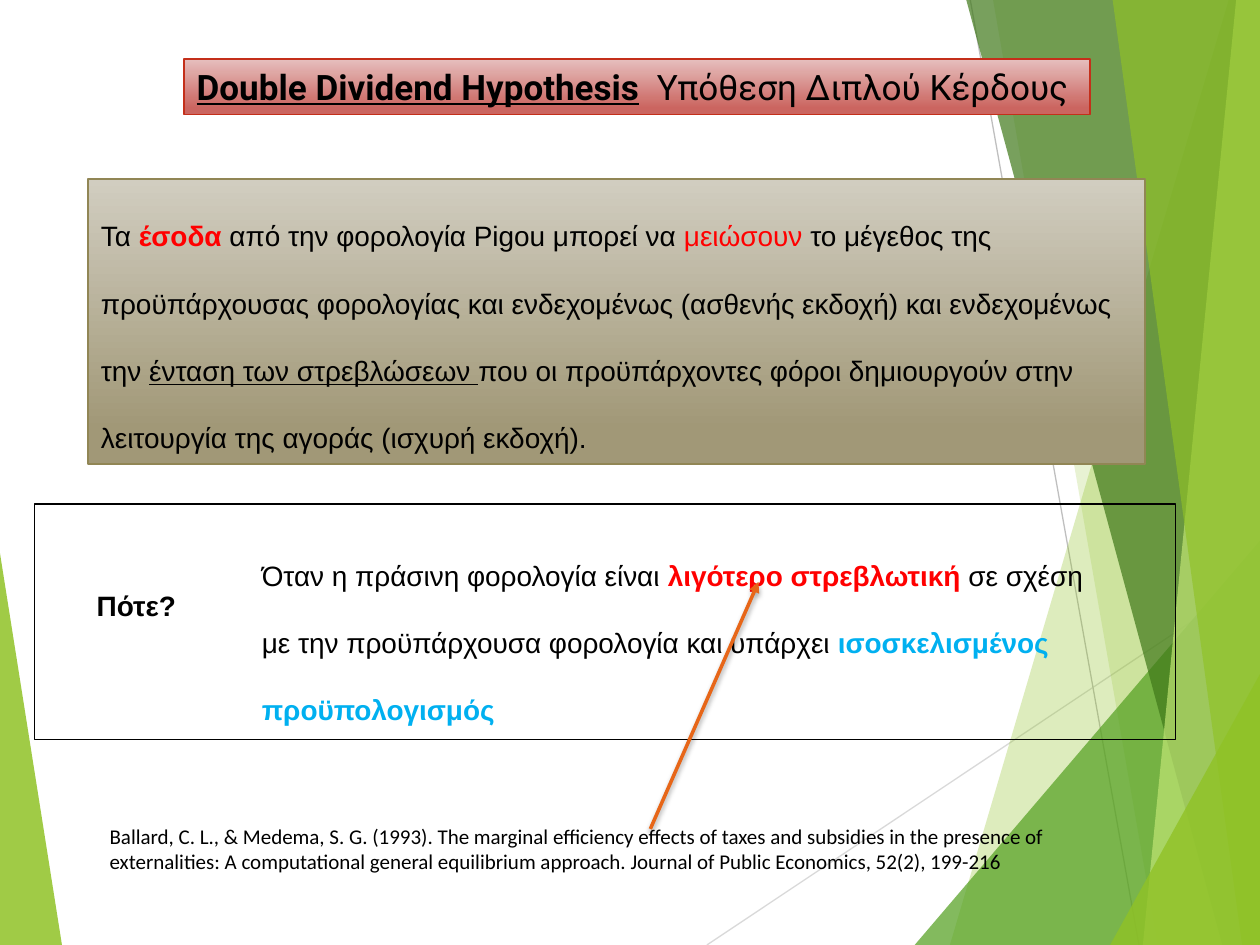
from dataclasses import dataclass

from lxml import etree
from pptx import Presentation
from pptx.dml.color import RGBColor
from pptx.enum.shapes import MSO_CONNECTOR, MSO_SHAPE
from pptx.enum.text import MSO_ANCHOR, MSO_AUTO_SIZE, PP_ALIGN
from pptx.oxml.ns import qn
from pptx.util import Cm, Pt

WIDTH, HEIGHT = 25.4, 19.05


@dataclass(frozen=True)
class Theme:
    ink: str = "000000"
    alert: str = "FF0000"
    budget: str = "00B0F0"
    arrow: str = "E76618"
    lime: str = "90C226"
    green: str = "54A021"
    forest: str = "3F7819"
    pale: str = "C0E474"
    light_ray: str = "D9D9D9"
    dark_ray: str = "BFBFBF"
    title_fill: tuple = ("E6BFBE", "CB6560")
    title_edge: str = "C42F1A"
    body_fill: tuple = ("D1CDC0", "A19877")
    body_edge: str = "918655"
    title_font: tuple = ("Roboto", 20)
    body_font: tuple = ("Arial", 16)
    citation_font: tuple = ("Calibri", 12)


def rgb(code):
    return RGBColor.from_string(code)


class SlideBuilder:
    def __init__(self, slide, theme):
        self.slide = slide
        self.theme = theme

    def panel(self, start, end, side, color, opacity):
        """Fill the area between a slanted edge and one side of the slide."""
        corners = [end, (side, HEIGHT), (side, start[1])]
        outline = self.slide.shapes.build_freeform(Cm(start[0]), Cm(start[1]))
        outline.add_line_segments([(Cm(x), Cm(y)) for x, y in corners])
        facet = outline.convert_to_shape()
        facet.shadow.inherit = False
        facet.line.fill.background()
        facet.fill.solid()
        facet.fill.fore_color.rgb = rgb(color)
        tint = facet._element.spPr.find(".//" + qn("a:srgbClr"))
        etree.SubElement(tint, qn("a:alpha"), val=str(opacity * 1000))

    def line(self, start, end, color, weight, arrow=False):
        stroke = self.slide.shapes.add_connector(
            MSO_CONNECTOR.STRAIGHT, *(Cm(v) for v in (*start, *end)))
        stroke.line.color.rgb = rgb(color)
        stroke.line.width = Pt(weight)
        properties = stroke._element.spPr
        effects = etree.SubElement(properties, qn("a:effectLst"))
        if arrow:
            etree.SubElement(properties.find(qn("a:ln")), qn("a:tailEnd"), type="triangle")
            shadow = etree.SubElement(effects, qn("a:outerShdw"), blurRad=str(Pt(3)),
                                      dist=str(Pt(2)), dir="5400000", rotWithShape="0")
            shade = etree.SubElement(shadow, qn("a:srgbClr"), val=self.theme.ink)
            etree.SubElement(shade, qn("a:alpha"), val="35000")

    def placeholder(self, holder, box, paragraphs, font, fill, edge, spacing=1.0):
        """Move a placeholder above the backdrop and give it a gradient panel."""
        self.slide.shapes._spTree.append(holder._element)
        holder.left, holder.top, holder.width, holder.height = (Cm(v) for v in box)
        holder.fill.gradient()
        holder.fill.gradient_angle = 270
        for stop, color, position in zip(holder.fill.gradient_stops, fill, (0, 0.88)):
            stop.color.rgb = rgb(color)
            stop.position = position
        holder.line.color.rgb = rgb(edge)
        holder.line.width = Pt(1)
        self.fill_text(holder.text_frame, paragraphs, font, spacing)
        for paragraph in holder.text_frame.paragraphs:
            properties = paragraph._p.get_or_add_pPr()
            properties.set("marL", "0")
            properties.set("indent", "0")
            bullet_off = etree.Element(qn("a:buNone"))
            properties.find(qn("a:defRPr")).addprevious(bullet_off)

    def text(self, box, paragraphs, font, spacing=1.0, bold=False, wrap=True):
        frame = self.slide.shapes.add_textbox(*(Cm(v) for v in box)).text_frame
        self.fill_text(frame, paragraphs, font, spacing, bold, wrap)

    def frame(self, box, color, weight):
        border = self.slide.shapes.add_shape(MSO_SHAPE.RECTANGLE, *(Cm(v) for v in box))
        border.shadow.inherit = False
        border.fill.background()
        border.line.color.rgb = rgb(color)
        border.line.width = Pt(weight)

    def fill_text(self, frame, paragraphs, font, spacing, bold=False, wrap=True):
        """Fill a frame; each run is (text, font settings that differ)."""
        frame.word_wrap = wrap
        frame.auto_size = MSO_AUTO_SIZE.NONE
        frame.vertical_anchor = MSO_ANCHOR.TOP
        for index, runs in enumerate(paragraphs):
            paragraph = frame.add_paragraph() if index else frame.paragraphs[0]
            paragraph.alignment = PP_ALIGN.LEFT
            paragraph.line_spacing = spacing
            paragraph.space_before = Pt(0)
            paragraph.font.name, size = font
            paragraph.font.size = Pt(size)
            paragraph.font.bold = bold
            paragraph.font.color.rgb = rgb(self.theme.ink)
            for words, settings in runs:
                run = paragraph.add_run()
                run.text = words
                run.font.bold = settings.get("bold")
                run.font.underline = settings.get("underline")
                if "color" in settings:
                    run.font.color.rgb = rgb(settings["color"])


def main():
    deck = Presentation()
    deck.slide_width, deck.slide_height = Cm(WIDTH), Cm(HEIGHT)
    slide = deck.slides.add_slide(deck.slide_layouts[1])
    theme = Theme()
    build = SlideBuilder(slide, theme)

    plain = {}
    underlined = {"underline": True}
    alert = {"color": theme.alert}
    strong_alert = {"color": theme.alert, "bold": True}
    strong_budget = {"color": theme.budget, "bold": True}

    # Backdrop of rays and translucent facets
    build.panel((0, 11.15), (1.25, HEIGHT), 0, theme.lime, 85)
    build.line((14.25, HEIGHT), (WIDTH, 11.61), theme.light_ray, 0.75)
    build.line((19.56, 0), (22.96, HEIGHT), theme.dark_ray, 0.75)
    for start, foot, color, opacity in (
        ((24.77, 0), 19.15, theme.lime, 30),
        ((20.02, 0), 23.34, theme.lime, 20),
        ((WIDTH, 10.9), 18.44, theme.green, 72),
        ((19.48, 0), 24.64, theme.forest, 70),
        ((24.92, 0), 23.04, theme.pale, 70),
        ((22.43, 0), 25.04, theme.lime, 65),
        ((WIDTH, 13.59), 22.38, theme.lime, 80),
    ):
        build.panel(start, (foot, HEIGHT), WIDTH, color, opacity)

    # Title
    build.placeholder(slide.shapes.title, (3.71, 1.19, 18.26, 1.12), [
        [("Double Dividend Hypothesis", {"bold": True, "underline": True}),
         ("  Υπόθεση Διπλού Κέρδους", plain)],
    ], theme.title_font, theme.title_fill, theme.title_edge)

    # Hypothesis
    build.placeholder(slide.placeholders[1], (1.78, 3.61, 21.31, 5.74), [
        [("Τα ", plain), ("έσοδα ", strong_alert),
         ("από την φορολογία Pigou μπορεί να ", plain), ("μειώσουν", alert),
         (" το μέγεθος της", plain)],
        [("προϋπάρχουσας φορολογίας και ενδεχομένως (ασθενής εκδοχή) και ενδεχομένως", plain)],
        [("την ", plain), ("ένταση των στρεβλώσεων ", underlined),
         ("που οι προϋπάρχοντες φόροι δημιουργούν στην", plain)],
        [("λειτουργία της αγοράς (ισχυρή εκδοχή).", plain)],
    ], theme.body_font, theme.body_fill, theme.body_edge, spacing=2.0)

    # Conditions
    build.text((1.7, 11.73, 2.13, 0.94), [[("Πότε?", plain)]],
               theme.body_font, bold=True, wrap=False)
    build.text((5.03, 10.46, 17.27, 4.14), [
        [("Όταν η πράσινη φορολογία είναι ", plain),
         ("λιγότερο στρεβλωτική ", strong_alert), ("σε σχέση", plain)],
        [("με την προϋπάρχουσα φορολογία και υπάρχει ", plain),
         ("ισοσκελισμένος", strong_budget)],
        [("προϋπολογισμός", strong_budget)],
    ], theme.body_font, spacing=2.0)
    build.frame((0.69, 10.16, 23.01, 4.75), theme.ink, 0.75)

    # Citation and its arrow
    build.text((1.96, 16.48, 21.64, 1.27), [[(
        "Ballard, C. L., & Medema, S. G. (1993). The marginal efficiency effects of taxes "
        "and subsidies in the presence of externalities: A computational general "
        "equilibrium approach. Journal of Public Economics, 52(2), 199-216", plain)]],
        theme.citation_font)
    build.line((13.11, 16.71), (15.29, 11.73), theme.arrow, 2, arrow=True)

    deck.save("out.pptx")


if __name__ == "__main__":
    main()
